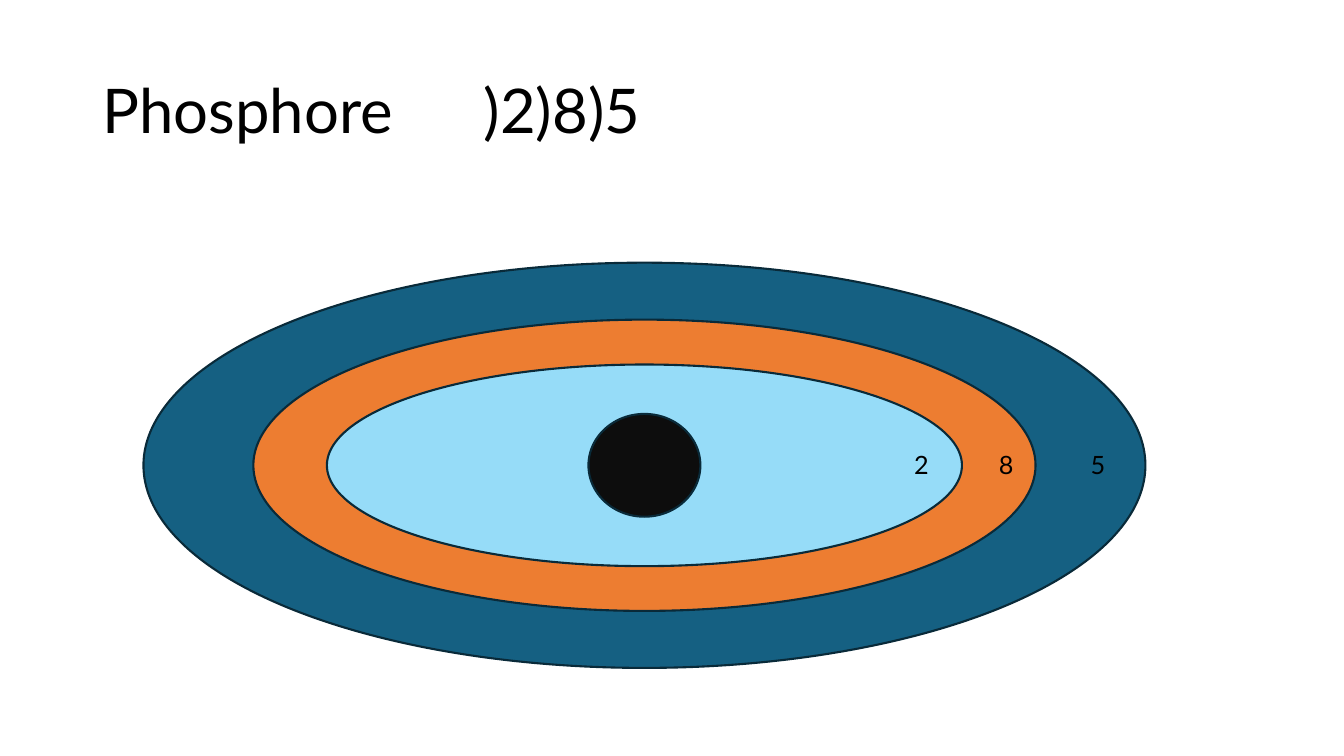
from lxml.etree import SubElement
from pptx import Presentation
from pptx.dml.color import RGBColor
from pptx.enum.shapes import MSO_SHAPE
from pptx.enum.text import MSO_ANCHOR
from pptx.oxml.ns import qn
from pptx.util import Inches, Pt

BLACK = RGBColor(0x00, 0x00, 0x00)
OUTLINE = RGBColor(0x09, 0x2A, 0x39)
TEAL = RGBColor(0x15, 0x60, 0x82)
ORANGE = RGBColor(0xED, 0x7D, 0x31)
SKY = RGBColor(0x96, 0xDC, 0xF8)
NUCLEUS = RGBColor(0x0D, 0x0D, 0x0D)


class AtomSlide:
    """Slide whose lengths are percentages of its width and height."""
    font = "Lato"
    centre = (47.95, 61.55)

    def __init__(self, prs):
        self.prs = prs
        self.s = prs.slides.add_slide(prs.slide_layouts[6])

    def box(self, x, y, w, h):
        sw, sh = self.prs.slide_width, self.prs.slide_height
        return [round(v * side / 100)
                for v, side in ((x, sw), (y, sh), (w, sw), (h, sh))]

    def text(self, text, x, y, w, h, size, tabs=(), spacing=None,
             anchor=MSO_ANCHOR.TOP):
        tf = self.s.shapes.add_textbox(*self.box(x, y, w, h)).text_frame
        tf.word_wrap = True
        tf.vertical_anchor = anchor
        p = tf.paragraphs[0]
        p.line_spacing = spacing
        # Tab stops, in inches from the text edge
        tab_list = SubElement(p._p.get_or_add_pPr(), qn("a:tabLst"))
        for pos in tabs:
            SubElement(tab_list, qn("a:tab"), pos=str(Inches(pos)), algn="l")
        r = p.add_run()
        r.text = text
        r.font.name = self.font
        r.font.size = Pt(size)
        r.font.color.rgb = BLACK

    def ellipse(self, w, h, fill):
        cx, cy = self.centre
        sp = self.s.shapes.add_shape(
            MSO_SHAPE.OVAL, *self.box(cx - w / 2, cy - h / 2, w, h))
        sp.shadow.inherit = False
        sp.fill.solid()
        sp.fill.fore_color.rgb = fill
        sp.line.color.rgb = OUTLINE
        sp.line.width = Pt(1.5)


def main():
    prs = Presentation()
    prs.slide_width, prs.slide_height = Inches(13.33), Inches(7.5)
    atom = AtomSlide(prs)

    # Title with the electron configuration
    atom.text("Phosphore\t)2)8)5", 6.9, 5.33, 86.25, 19.33, size=44,
              tabs=[3.78], spacing=0.9, anchor=MSO_ANCHOR.MIDDLE)

    # Shells from the outside in, then the nucleus
    for w, h, fill in [(74.55, 53.6, TEAL), (58.2, 38.53, ORANGE),
                       (47.25, 26.67, SKY), (8.33, 13.6, NUCLEUS)]:
        atom.ellipse(w, h, fill)

    # Electron count of each shell
    atom.text("2\t8\t5", 67.28, 58.8, 24.8, 5.33, size=18, tabs=[0.84, 1.75])

    prs.save("out.pptx")


if __name__ == "__main__":
    main()
